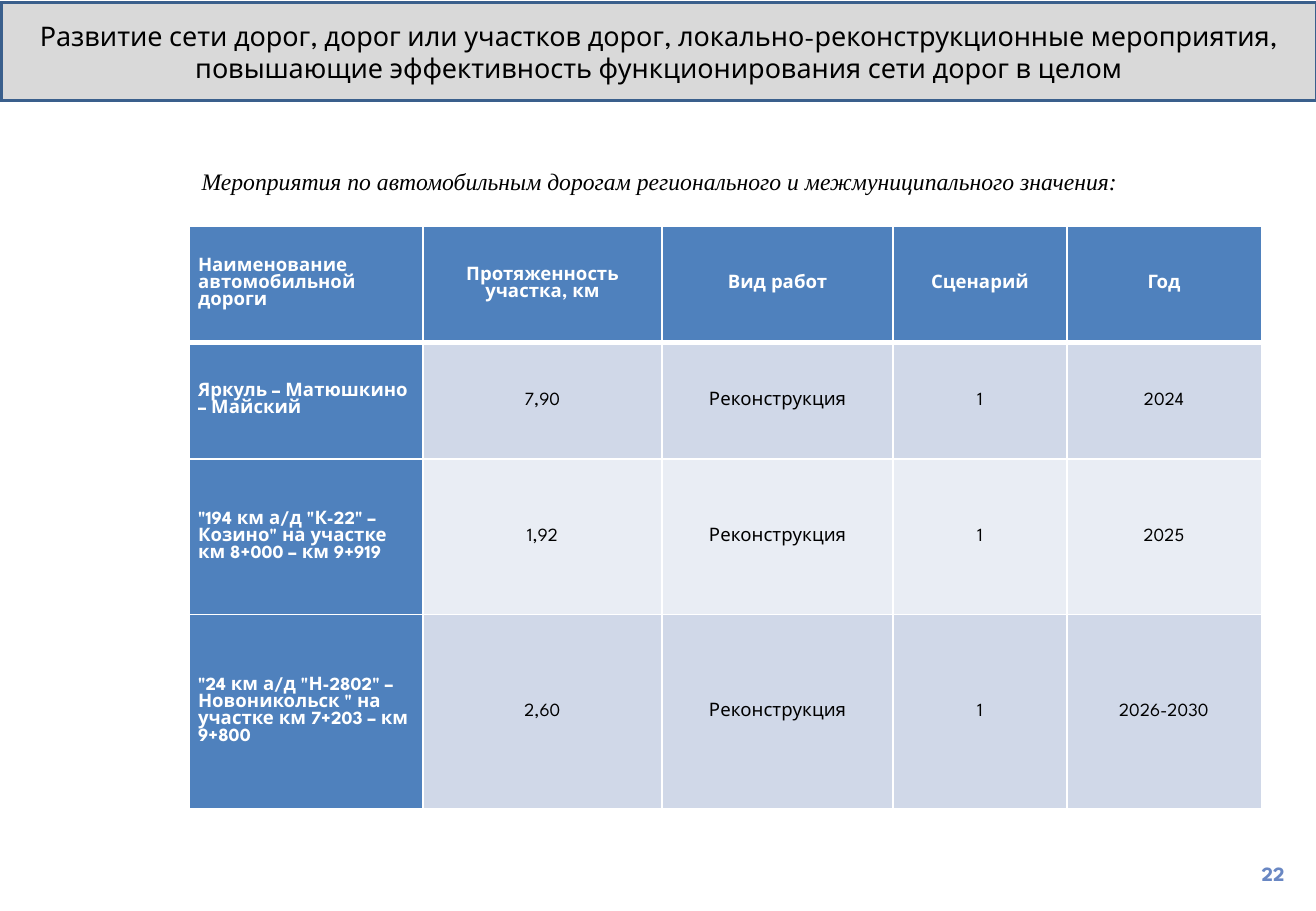
from dataclasses import dataclass

from pptx import Presentation
from pptx import util as u
from pptx.dml.color import RGBColor
from pptx.enum import text
from pptx.oxml import parse_xml
from pptx.oxml.ns import nsdecls

Inches, Pt = u.Inches, u.Pt
ALIGN = text.PP_ALIGN


@dataclass(frozen=True)
class Theme:
    main: str = "League Spartan"
    serif: str = "Times New Roman"
    black: str = "000000"
    white: str = "FFFFFF"
    gray: str = "D9D9D9"
    edge: str = "3A5F8C"
    blue: str = "4F81BD"
    bands: tuple = ("D0D8E8", "E9EDF4")
    page: str = "6987C3"
    title: int = 16
    lead: int = 14
    cell: int = 11
    note: int = 12


T = Theme()

COLS = (1.92, 1.97, 1.9, 1.43, 1.6)
ROWS = (0.96, 0.96, 1.28, 1.6)
WORK = "Реконструкция"
DATA = (
    ("Наименование автомобильной дороги", "Протяженность участка, км",
     "Вид работ", "Сценарий", "Год"),
    ("Яркуль – Матюшкино – Майский", "7,90", WORK, "1", "2024"),
    ('"194 км а/д "К-22" – Козино" на участке км 8+000 – км 9+919',
     "1,92", WORK, "1", "2025"),
    ('"24 км а/д "Н-2802" – Новоникольск " на участке км 7+203 – км 9+800',
     "2,60", WORK, "1", "2026-2030"),
)


def rgb(code):
    return RGBColor.from_string(code)


def write(frame, words, size, color, align, face=T.main, bold=False, italic=False):
    frame.text = words
    frame.word_wrap = True
    frame.vertical_anchor = text.MSO_ANCHOR.MIDDLE
    par = frame.paragraphs[0]
    par.alignment = align
    font = par.font
    font.name, font.size = face, Pt(size)
    font.bold, font.italic = bold, italic
    font.color.rgb = rgb(color)


def add_text(slide, box, *args, **style):
    shape = slide.shapes.add_textbox(*map(Inches, box))
    write(shape.text_frame, *args, **style)


# Title band across the top
def add_title(slide, box, words):
    band = slide.shapes.title
    band.left, band.top, band.width, band.height = map(Inches, box)
    band.fill.solid()
    band.fill.fore_color.rgb = rgb(T.gray)
    band.line.color.rgb = rgb(T.edge)
    band.line.width = Pt(2)
    write(band.text_frame, words, T.title, T.black, ALIGN.CENTER)
    band.text_frame.auto_size = text.MSO_AUTO_SIZE.NONE


def set_edges(cell, base):
    props = cell._tc.get_or_add_tcPr()
    widths = {"lnL": 1, "lnR": 1, "lnT": 1, "lnB": base}
    for spot, (tag, width) in enumerate(widths.items()):
        props.insert(spot, parse_xml(
            f'<a:{tag} {nsdecls("a")} w="{Pt(width)}"><a:solidFill>'
            f'<a:srgbClr val="{T.white}"/></a:solidFill></a:{tag}>'))


# Table of road works
def add_roads(slide, box):
    grid = slide.shapes.add_table(len(ROWS), len(COLS), *map(Inches, box)).table
    for col, width in zip(grid.columns, COLS):
        col.width = Inches(width)
    for r, (height, line) in enumerate(zip(ROWS, DATA)):
        grid.rows[r].height = Inches(height)
        for c, words in enumerate(line):
            cell = grid.cell(r, c)
            head = r == 0 or c == 0
            cell.margin_left = cell.margin_right = Inches(0.07)
            cell.margin_top = cell.margin_bottom = 0
            cell.vertical_anchor = text.MSO_ANCHOR.MIDDLE
            cell.fill.solid()
            cell.fill.fore_color.rgb = rgb(T.blue if head else T.bands[(r - 1) % 2])
            align = ALIGN.CENTER if c else ALIGN.LEFT if r else ALIGN.JUSTIFY
            write(cell.text_frame, words, T.cell, T.white if head else T.black,
                  align, bold=head)
            set_edges(cell, 1 if r else 3)


def main():
    deck = Presentation()
    deck.slide_width, deck.slide_height = Inches(10.83), Inches(7.5)
    slide = deck.slides.add_slide(deck.slide_layouts[5])

    add_title(slide, (0.01, 0.02, 10.83, 0.81),
              "Развитие сети дорог, дорог или участков дорог, "
              "локально-реконструкционные мероприятия, повышающие "
              "эффективность функционирования сети дорог в целом")
    add_roads(slide, (1.56, 1.86, sum(COLS), sum(ROWS)))

    # Lead line above the table
    add_text(slide, (1.56, 1.32, 8.15, 0.34),
             "Мероприятия по автомобильным дорогам регионального и "
             "межмуниципального значения:",
             T.lead, T.black, ALIGN.JUSTIFY, face=T.serif, italic=True)

    # Page number
    add_text(slide, (8.14, 6.93, 2.53, 0.52), "22", T.note, T.page,
             ALIGN.RIGHT, bold=True)

    deck.save("out.pptx")


if __name__ == "__main__":
    main()
